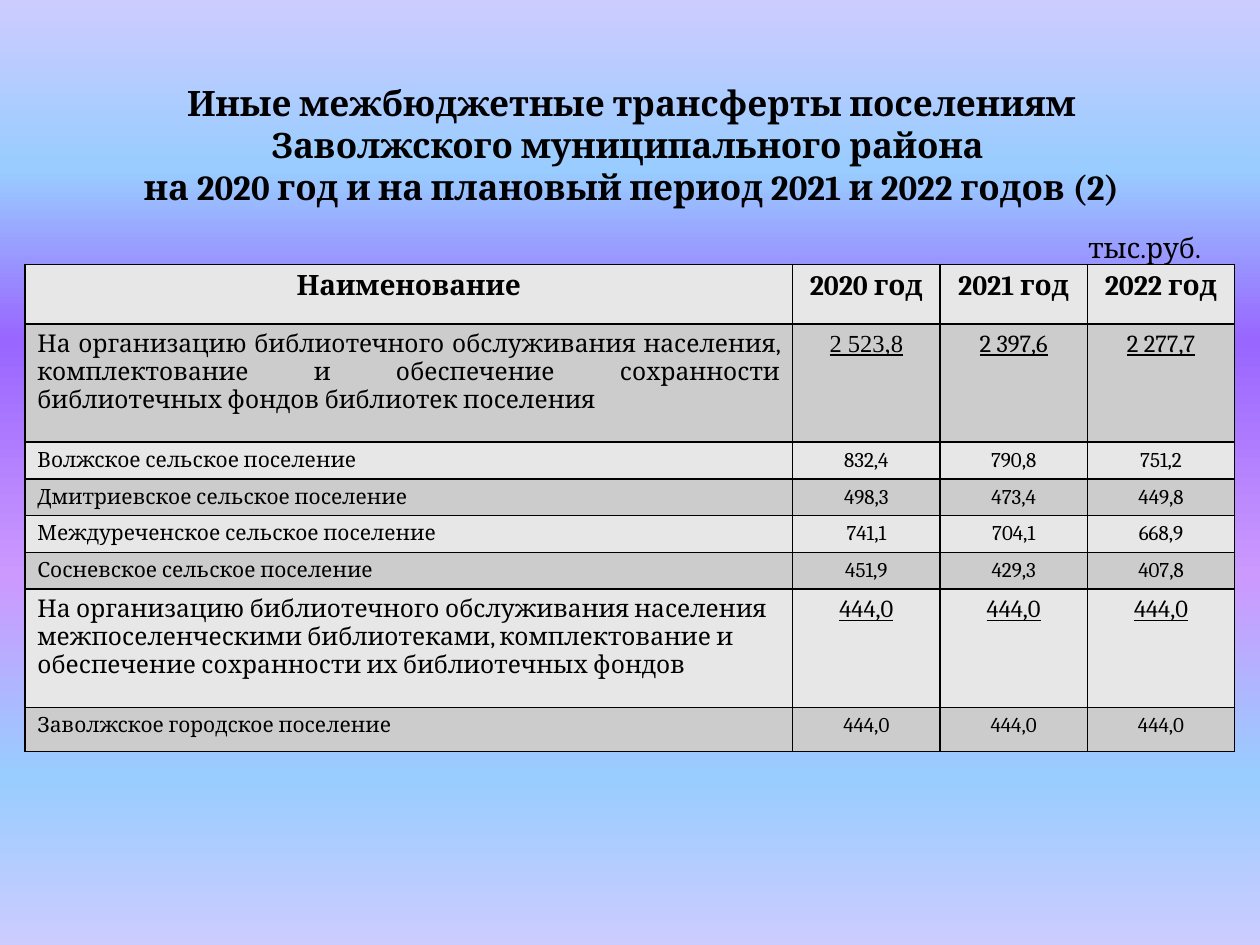
from pptx import Presentation
from pptx.dml.color import RGBColor
from pptx.enum.text import MSO_ANCHOR, PP_ALIGN
from pptx.oxml.ns import qn
from pptx.util import Cm, Pt
from lxml import etree

LEFT, CENTER, JUSTIFY = PP_ALIGN.LEFT, PP_ALIGN.CENTER, PP_ALIGN.JUSTIFY
MIDDLE = MSO_ANCHOR.MIDDLE
FONT = "Cambria"
BLACK = "000000"
ROW_FILLS = ["E7E7E7", "CCCCCC"]
BACKGROUND_STOPS = [(0, "CCCCFF"), (18, "99CCFF"), (36, "9966FF"),
                    (61, "CC99FF"), (82, "99CCFF"), (100, "CCCCFF")]
COLUMN_WIDTHS = [15.48, 2.97, 2.97, 2.97]

# Per row kind: height in cm, text size, bold, underlined figures
ROW_KINDS = {
    "header": (1.2, 16, True, False),
    "group": (2.38, 14, False, True),
    "item": (0.74, 12, False, False),
    "last": (0.89, 12, False, False),
}
ROWS = [
    ("header", CENTER, ["Наименование", "2020 год", "2021 год", "2022 год"]),
    ("group", JUSTIFY, ["На организацию библиотечного обслуживания населения, "
                        "комплектование и обеспечение сохранности "
                        "библиотечных фондов библиотек поселения",
                        "2 523,8", "2 397,6", "2 277,7"]),
    ("item", LEFT, ["Волжское сельское поселение", "832,4", "790,8", "751,2"]),
    ("item", LEFT, ["Дмитриевское сельское поселение", "498,3", "473,4", "449,8"]),
    ("item", LEFT, ["Междуреченское сельское поселение", "741,1", "704,1", "668,9"]),
    ("item", LEFT, ["Сосневское сельское поселение", "451,9", "429,3", "407,8"]),
    ("group", LEFT, ["На организацию библиотечного обслуживания населения "
                     "межпоселенческими библиотеками, комплектование и "
                     "обеспечение сохранности их библиотечных фондов",
                     "444,0", "444,0", "444,0"]),
    ("last", LEFT, ["Заволжское городское поселение", "444,0", "444,0", "444,0"]),
]


def color(value):
    return RGBColor.from_string(value)


def add_run(paragraph, text, size, bold=False, underline=False, font=FONT):
    run = paragraph.add_run()
    run.text = text
    run.font.name = font
    run.font.size = Pt(size)
    run.font.bold = bold
    run.font.underline = underline
    run.font.color.rgb = color(BLACK)


def set_background(slide):
    fill = slide.background.fill
    fill.gradient()
    fill.gradient_angle = 270
    stop_list = next(slide.background._cSld.iter(qn("a:gsLst")))
    for stop in list(stop_list):
        stop_list.remove(stop)
    for percent, value in BACKGROUND_STOPS:
        stop = etree.SubElement(stop_list, qn("a:gs"), pos=str(percent * 1000))
        etree.SubElement(stop, qn("a:srgbClr"), val=value)


def add_title(slide):
    title = slide.shapes.title
    title.left, title.top, title.width, title.height = Cm(1.3), Cm(1.32), Cm(22.86), Cm(3.18)
    title.text_frame.vertical_anchor = MIDDLE
    paragraph = title.text_frame.paragraphs[0]
    paragraph.alignment = CENTER
    add_run(paragraph, "Иные межбюджетные трансферты поселениям "
                       "Заволжского муниципального района ", 20, bold=True)
    paragraph.add_line_break()
    add_run(paragraph, "на 2020 год и на плановый период 2021 и 2022 годов (2)", 20, bold=True)


def set_borders(cell):
    properties = cell._tc.get_or_add_tcPr()
    for side in ("a:lnL", "a:lnR", "a:lnT", "a:lnB"):
        line = etree.SubElement(properties, qn(side), w=str(Pt(1)))
        solid = etree.SubElement(line, qn("a:solidFill"))
        etree.SubElement(solid, qn("a:srgbClr"), val=BLACK)


def add_transfers_table(slide):
    heights = [ROW_KINDS[kind][0] for kind, _, _ in ROWS]
    table = slide.shapes.add_table(
        len(ROWS), len(COLUMN_WIDTHS), Cm(0.5), Cm(5.33),
        Cm(sum(COLUMN_WIDTHS)), Cm(sum(heights))).table
    table.first_row = table.horz_banding = False
    for column, width in zip(table.columns, COLUMN_WIDTHS):
        column.width = Cm(width)
    for row_index, (kind, name_alignment, texts) in enumerate(ROWS):
        height, size, bold, underline = ROW_KINDS[kind]
        table.rows[row_index].height = Cm(height)
        for column_index, text in enumerate(texts):
            cell = table.cell(row_index, column_index)
            set_borders(cell)
            cell.fill.solid()
            cell.fill.fore_color.rgb = color(ROW_FILLS[row_index % 2])
            paragraph = cell.text_frame.paragraphs[0]
            paragraph.alignment = CENTER if column_index else name_alignment
            font = "Times New Roman" if text == "2 523,8" else FONT
            add_run(paragraph, text, size, bold, underline and column_index > 0, font)


def add_unit_label(slide):
    label = slide.shapes.add_textbox(Cm(21.69), Cm(4.52), Cm(3), Cm(0.94))
    label.text_frame.word_wrap = True
    add_run(label.text_frame.paragraphs[0], "тыс.руб.", 16)


def main():
    presentation = Presentation()
    presentation.slide_width, presentation.slide_height = Cm(25.4), Cm(19.05)
    slide = presentation.slides.add_slide(presentation.slide_layouts[5])
    set_background(slide)
    add_title(slide)
    add_transfers_table(slide)
    add_unit_label(slide)
    presentation.save("out.pptx")


if __name__ == "__main__":
    main()
